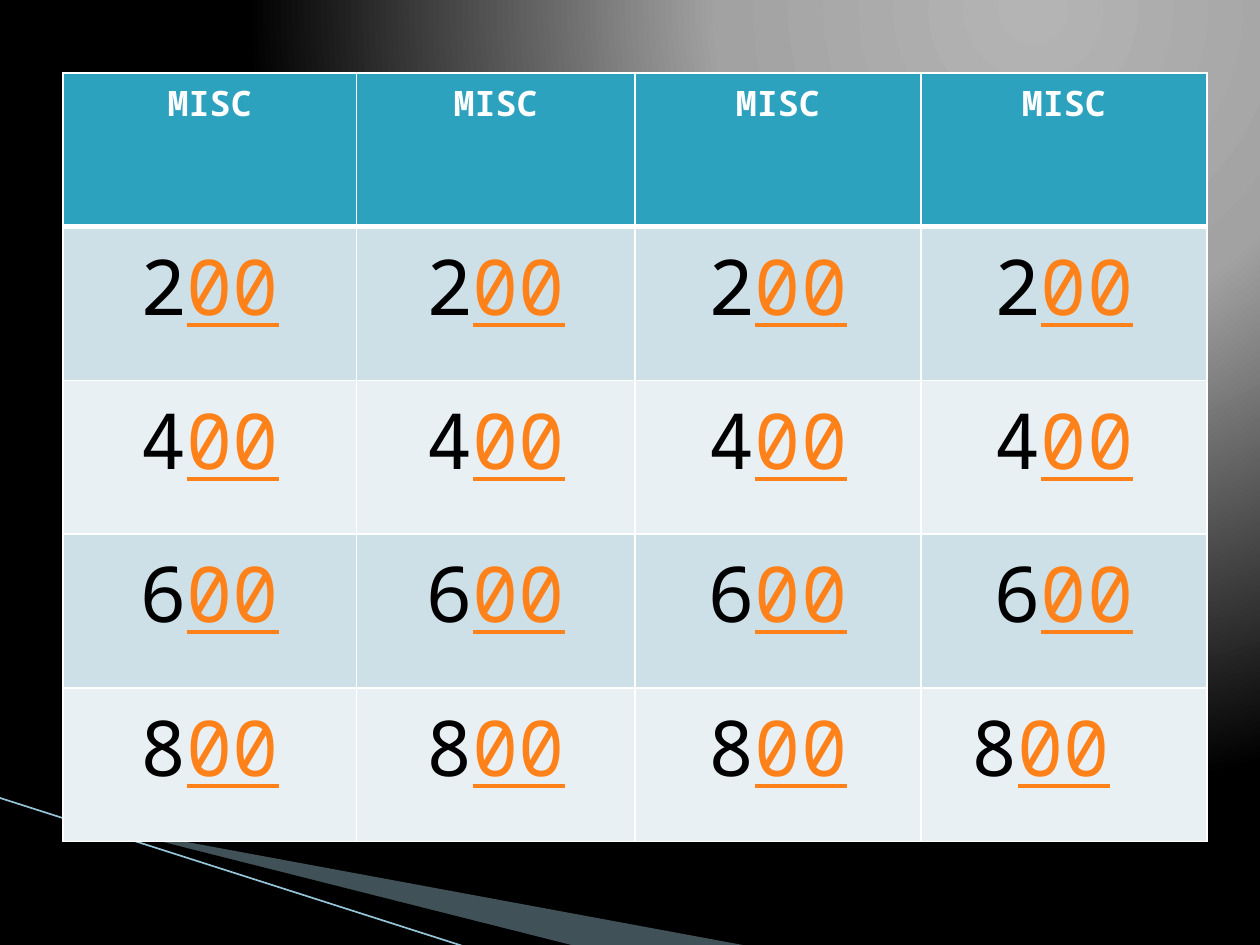
from dataclasses import dataclass

from lxml import etree
from pptx import Presentation
from pptx.dml.color import RGBColor
from pptx.enum.shapes import MSO_CONNECTOR
from pptx.enum.text import PP_ALIGN
from pptx.oxml import parse_xml
from pptx.oxml.ns import nsdecls, qn
from pptx.util import Inches, Pt

CENTER = PP_ALIGN.CENTER
STRAIGHT = MSO_CONNECTOR.STRAIGHT
BLANK_LAYOUT = 6


@dataclass(frozen=True)
class Theme:
    font: str = "Noto Sans Mono"
    heading_size: int = 20
    value_size: int = 44
    black: str = "000000"
    white: str = "FFFFFF"
    header: str = "2DA2BF"
    bands: tuple = ("CDE0E8", "E8F0F4")
    link: str = "FF8119"
    wedge: str = "A0CBDC"
    line: str = "97C5D8"
    background: tuple = ((0, "B4B4B4"), (40, "A2A2A2"), (100, "000000"))


@dataclass(frozen=True)
class TextPart:
    text: str
    format: dict


@dataclass(frozen=True)
class Wedge:
    points: tuple
    color: str
    opacity: int = 100


THEME = Theme()
HEADING_FORMAT = {"size": Pt(THEME.heading_size), "bold": True, "color": THEME.white}
DIGIT_FORMAT = {"size": Pt(THEME.value_size), "bold": False, "color": THEME.black}
LINK_FORMAT = DIGIT_FORMAT | {"color": THEME.link, "underline": True}

COLUMN_WIDTHS = (2.33, 2.21, 2.27, 2.27)
ROW_HEIGHT = 1.22
LEADING_DIGITS = "2468"
THIN, THICK = 1, 3

WEDGES = (
    Wedge(((0.55, 6.51), (5.95, 7.51), (4.56, 7.51), (0.55, 6.5)), THEME.wedge, 40),
    Wedge(((0.53, 6.49), (4.57, 7.51), (3.72, 7.52), (0.54, 6.5)), THEME.black),
)


def set_background(slide) -> None:
    """Fill the background with a circular gradient centred at the upper right."""
    fill = slide.background.fill
    fill.solid()
    stops = "".join(
        f'<a:gs pos="{position * 1000}"><a:srgbClr val="{color}"/></a:gs>'
        for position, color in THEME.background
    )
    gradient = parse_xml(
        f'<a:gradFill {nsdecls("a")} rotWithShape="1"><a:gsLst>{stops}</a:gsLst>'
        '<a:path path="circle"><a:fillToRect l="65000" t="0" r="0" b="98000"/></a:path>'
        "</a:gradFill>"
    )
    properties = slide.background._cSld.find(f'{qn("p:bg")}/{qn("p:bgPr")}')
    properties.replace(properties.find(qn("a:solidFill")), gradient)


def draw_wedge(slide, wedge: Wedge) -> None:
    points = [(Inches(x), Inches(y)) for x, y in wedge.points]
    builder = slide.shapes.build_freeform(*points[0], scale=1.0)
    builder.add_line_segments(points[1:], close=True)
    shape = builder.convert_to_shape()
    shape.shadow.inherit = False
    shape.line.fill.background()
    shape.fill.solid()
    shape.fill.fore_color.rgb = RGBColor.from_string(wedge.color)
    if wedge.opacity < 100:
        color = shape._element.spPr.find(f'{qn("a:solidFill")}/{qn("a:srgbClr")}')
        etree.SubElement(color, qn("a:alpha"), val=str(wedge.opacity * 1000))


def draw_line(slide) -> None:
    connector = slide.shapes.add_connector(
        STRAIGHT, Inches(-0.01), Inches(6.33), Inches(3.71), Inches(7.52)
    )
    connector.line.color.rgb = RGBColor.from_string(THEME.line)
    connector.line.width = Pt(0.95)
    etree.SubElement(connector._element.spPr, qn("a:effectLst"))


def set_borders(cell, top: int, bottom: int) -> None:
    properties = cell._tc.get_or_add_tcPr()
    widths = {"lnL": THIN, "lnR": THIN, "lnT": top, "lnB": bottom}
    for tag, width in widths.items():
        properties.append(parse_xml(
            f'<a:{tag} {nsdecls("a")} w="{Pt(width)}"><a:solidFill>'
            f'<a:srgbClr val="{THEME.white}"/></a:solidFill></a:{tag}>'
        ))


def write_cell(cell, parts: list[TextPart], fill: str) -> None:
    cell.fill.solid()
    cell.fill.fore_color.rgb = RGBColor.from_string(fill)
    paragraph = cell.text_frame.paragraphs[0]
    paragraph.alignment = CENTER
    for part in parts:
        run = paragraph.add_run()
        run.text = part.text
        run.font.name = THEME.font
        for name, value in part.format.items():
            if name == "color":
                run.font.color.rgb = RGBColor.from_string(value)
            else:
                setattr(run.font, name, value)


def draw_board(slide) -> None:
    row_count, column_count = len(LEADING_DIGITS) + 1, len(COLUMN_WIDTHS)
    table = slide.shapes.add_table(
        row_count, column_count, Inches(0.5), Inches(0.58),
        Inches(sum(COLUMN_WIDTHS)), Inches(ROW_HEIGHT * row_count),
    ).table
    for column, width in zip(table.columns, COLUMN_WIDTHS):
        column.width = Inches(width)
    for row_index, row in enumerate(table.rows):
        row.height = Inches(ROW_HEIGHT)
        for column_index, cell in enumerate(row.cells):
            if row_index == 0:
                parts = [TextPart("MISC", HEADING_FORMAT)]
                fill = THEME.header
            else:
                parts = [
                    TextPart(LEADING_DIGITS[row_index - 1], DIGIT_FORMAT),
                    TextPart("00", LINK_FORMAT),
                ]
                fill = THEME.bands[(row_index - 1) % 2]
            # The last value ends with a space
            if (row_index, column_index) == (row_count - 1, column_count - 1):
                parts.append(TextPart(" ", DIGIT_FORMAT))
            set_borders(
                cell,
                top=THICK if row_index == 1 else THIN,
                bottom=THICK if row_index == 0 else THIN,
            )
            write_cell(cell, parts, fill)


def main() -> None:
    presentation = Presentation()
    presentation.slide_width = Inches(10)
    presentation.slide_height = Inches(7.5)
    slide = presentation.slides.add_slide(presentation.slide_layouts[BLANK_LAYOUT])

    # Backdrop
    set_background(slide)
    for wedge in WEDGES:
        draw_wedge(slide, wedge)
    draw_line(slide)

    # Question board
    draw_board(slide)
    presentation.save("out.pptx")


if __name__ == "__main__":
    main()
